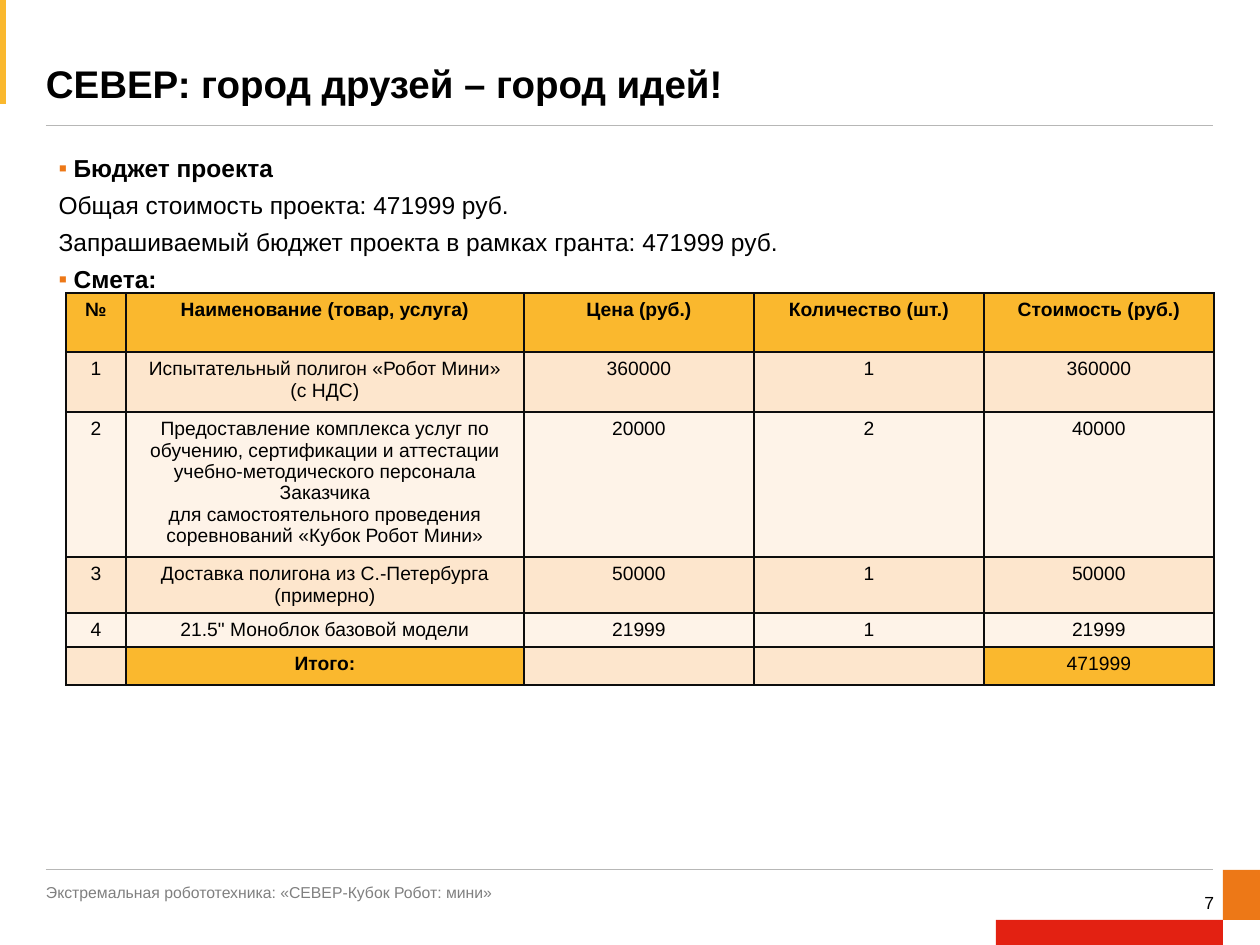
import dataclasses

import lxml.etree
import pptx
import pptx.dml.color
import pptx.enum.shapes
import pptx.enum.text
import pptx.oxml.ns
import pptx.util

ALIGN = pptx.enum.text.PP_ALIGN
ANCHOR = pptx.enum.text.MSO_ANCHOR
qn = pptx.oxml.ns.qn


@dataclasses.dataclass(frozen=True)
class Theme:
    font: str = "Arial"
    ink: str = "000000"
    muted: str = "808080"
    rule: str = "B7B7B6"
    gold: str = "FAB82E"
    orange: str = "ED7817"
    red: str = "E32112"
    grid: str = "0D0D0D"
    bands: tuple = ("FDE6CD", "FEF3E8")
    title: int = 22
    body: int = 14
    cell: int = 11
    page: int = 10
    foot: int = 9


THEME = Theme()

POINTS = [  # text, is a bulleted heading
    ("Бюджет проекта", True),
    ("Общая стоимость проекта: 471999 руб.", False),
    ("Запрашиваемый бюджет проекта в рамках гранта: 471999 руб.", False),
    ("Смета:", True),
]
COLS = [60, 398, 230, 230, 230]
COSTS = [  # row height, cells
    (59, ["№", "Наименование (товар, услуга)", "Цена (руб.)",
          "Количество (шт.)", "Стоимость (руб.)"]),
    (60, ["1", "Испытательный полигон «Робот Мини»\n(с НДС)",
          "360000", "1", "360000"]),
    (145, ["2", "Предоставление комплекса услуг по\n"
                "обучению, сертификации и аттестации\n"
                "учебно-методического персонала Заказчика\n"
                "для самостоятельного проведения\n"
                "соревнований «Кубок Робот Мини»",
           "20000", "2", "40000"]),
    (56, ["3", "Доставка полигона из С.-Петербурга (примерно)",
          "50000", "1", "50000"]),
    (34, ["4", "21.5\" Моноблок базовой модели",
          "21999", "1", "21999"]),
    (38, ["", "Итого:", "", "", "471999"]),
]


def px(count):
    return pptx.util.Emu(round(count * 914400 / 126))


def rgb(code):
    return pptx.dml.color.RGBColor.from_string(code)


def style(para, size, color=THEME.ink, bold=False, align=ALIGN.LEFT):
    para.alignment = align
    font = para.font
    font.name, font.size, font.bold = THEME.font, pptx.util.Pt(size), bold
    font.color.rgb = rgb(color)


def place(shape, box):
    shape.left, shape.top, shape.width, shape.height = map(px, box)


def trim(frame, anchor):
    """Drop the insets, wrap the text and anchor it."""
    frame.margin_left = frame.margin_right = 0
    frame.margin_top = frame.margin_bottom = 0
    frame.word_wrap = True
    frame.vertical_anchor = anchor


def add_block(slide, box, color):
    block = slide.shapes.add_shape(
        pptx.enum.shapes.MSO_SHAPE.RECTANGLE, *map(px, box))
    block.shadow.inherit = False
    block.fill.solid()
    block.fill.fore_color.rgb = rgb(color)
    block.line.fill.background()


def add_rule(slide, left, top, width):
    rule = slide.shapes.add_connector(
        pptx.enum.shapes.MSO_CONNECTOR.STRAIGHT,
        px(left), px(top), px(left + width), px(top))
    rule.line.color.rgb = rgb(THEME.rule)
    rule.line.width = pptx.util.Pt(0.5)
    lxml.etree.SubElement(rule._element.spPr, qn("a:effectLst"))


def add_label(slide, box, text, size, color, align):
    frame = slide.shapes.add_textbox(*map(px, box)).text_frame
    trim(frame, ANCHOR.MIDDLE)
    frame.text = text
    style(frame.paragraphs[0], size, color, align=align)


def set_bullet(para, on):
    props = para._p.get_or_add_pPr()
    indent = px(15) if on else 0
    props.set("marL", str(indent))
    props.set("indent", str(-indent))
    if not on:
        lxml.etree.SubElement(props, qn("a:buNone"))
        return
    color = lxml.etree.SubElement(props, qn("a:buClr"))
    lxml.etree.SubElement(color, qn("a:srgbClr"), val=THEME.orange)
    lxml.etree.SubElement(props, qn("a:buFont"), typeface=THEME.font)
    lxml.etree.SubElement(props, qn("a:buChar"), char="▪")


def add_head(slide, box, text):
    left, top, width, height = box
    add_block(slide, (0, 0, 6, 104), THEME.gold)
    title = slide.shapes.title
    place(title, (left, top, 1009, height))
    frame = title.text_frame
    trim(frame, ANCHOR.BOTTOM)
    frame.text = text
    frame.paragraphs[0].line_spacing = 0.9
    style(frame.paragraphs[0], THEME.title, bold=True)
    add_rule(slide, left, top + height + 18, width)


def add_list(slide, box, points):
    body = slide.placeholders[1]
    place(body, box)
    frame = body.text_frame
    frame.text = "\n".join(text for text, _ in points)
    for para, (_, head) in zip(frame.paragraphs, points):
        para.line_spacing = 0.9
        para.space_before = 0
        para.space_after = pptx.util.Pt(6)
        set_bullet(para, head)
        style(para, THEME.body, bold=head)


def set_edges(cell):
    props = cell._tc.get_or_add_tcPr()
    for side in "LRTB":
        edge = lxml.etree.SubElement(
            props, qn(f"a:ln{side}"), w=str(pptx.util.Pt(1)))
        fill = lxml.etree.SubElement(edge, qn("a:solidFill"))
        lxml.etree.SubElement(fill, qn("a:srgbClr"), val=THEME.grid)


def fill_cell(cell, text, color, bold):
    set_edges(cell)
    cell.fill.solid()
    cell.fill.fore_color.rgb = rgb(color)
    cell.text = text
    for para in cell.text_frame.paragraphs:
        style(para, THEME.cell, bold=bold, align=ALIGN.CENTER)
        if not text:  # keeps an empty cell from growing its row
            para._p.get_or_add_endParaRPr().set("sz", str(THEME.cell * 100))


def add_costs(slide, left, top):
    height = sum(high for high, _ in COSTS)
    table = slide.shapes.add_table(
        len(COSTS), len(COLS), px(left), px(top),
        px(sum(COLS)), px(height)).table
    table.horz_banding = False
    for col, width in zip(table.columns, COLS):
        col.width = px(width)
    last = len(COSTS) - 1
    for r, (high, texts) in enumerate(COSTS):
        table.rows[r].height = px(high)
        for c, text in enumerate(texts):
            strong = r == 0 or (r == last and text != "")
            color = THEME.gold if strong else THEME.bands[(r + 1) % 2]
            bold = r == 0 or (r == last and c == 1)
            fill_cell(table.cell(r, c), text, color, bold)


def add_foot(slide, box, text, page):
    left, top, width, _ = box
    right = left + width
    add_rule(slide, left, top, width)
    add_block(slide, (right + 10, top + 1, 37, 50), THEME.orange)
    add_block(slide, (right - 217, top + 51, 227, 25), THEME.red)
    add_label(slide, (left, top + 8, 1121, 31), text,
              THEME.foot, THEME.muted, ALIGN.LEFT)
    add_label(slide, (right - 33, top + 23, 34, 21), page,
              THEME.page, THEME.ink, ALIGN.RIGHT)


def main():
    deck = pptx.Presentation()
    deck.slide_width, deck.slide_height = px(1260), px(945)
    slide = deck.slides.add_slide(deck.slide_layouts[1])
    add_head(slide, (46, 65, 1167, 42), "СЕВЕР: город друзей – город идей!")
    add_list(slide, (46, 150, 1166, 699), POINTS)
    add_costs(slide, 66, 293)
    add_foot(slide, (46, 869, 1167, 76),
             "Экстремальная робототехника: «СЕВЕР-Кубок Робот: мини»", "7")
    deck.save("out.pptx")


if __name__ == "__main__":
    main()
